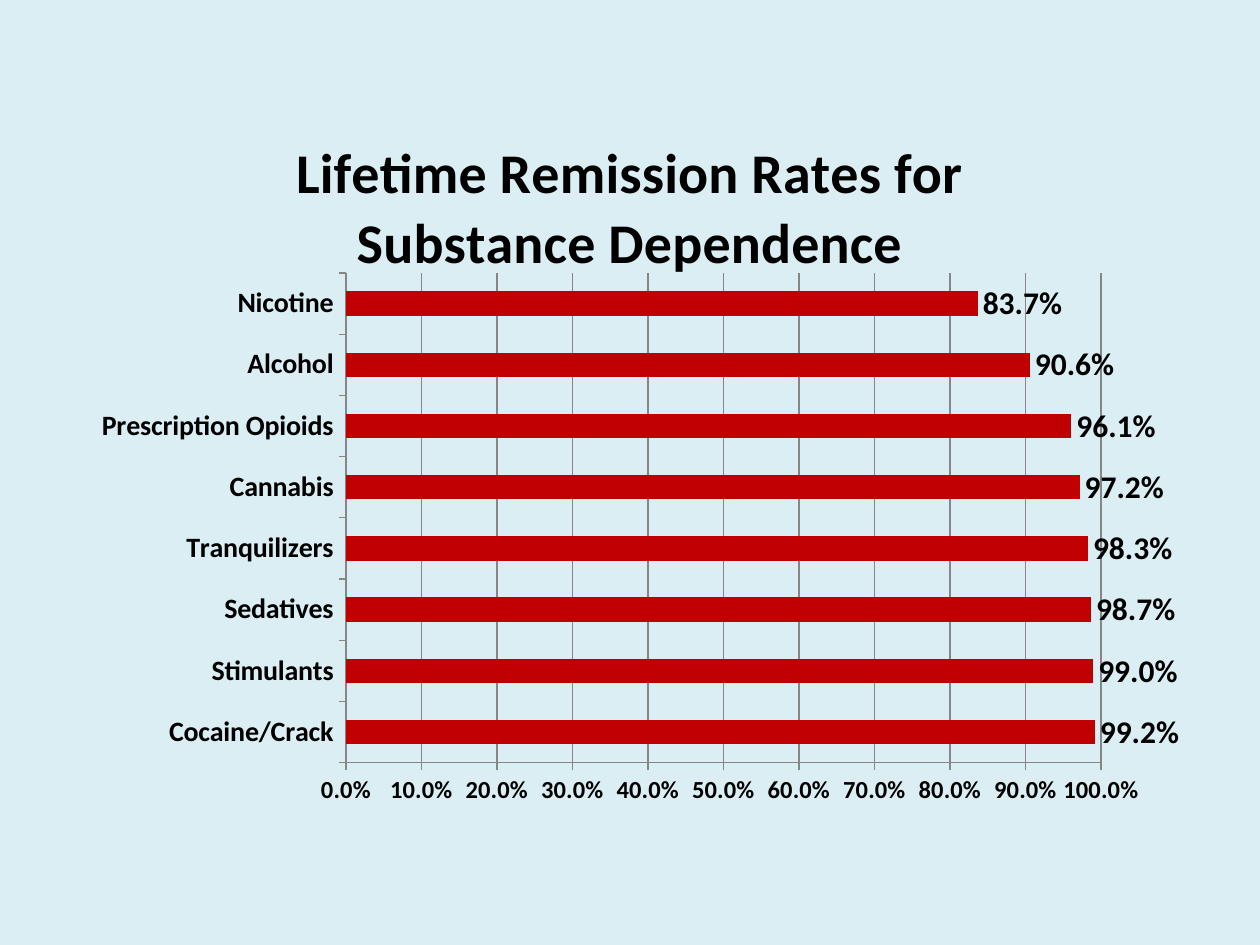
from lxml.etree import SubElement
from pptx import Presentation
from pptx.chart.data import CategoryChartData
from pptx.dml.color import RGBColor
from pptx.enum.chart import XL_CHART_TYPE, XL_LABEL_POSITION, XL_TICK_MARK
from pptx.oxml.ns import qn
from pptx.util import Emu, Pt

BACKGROUND = RGBColor(0xDB, 0xEE, 0xF4)
BAR = RGBColor(0xC0, 0x00, 0x00)
TEXT = RGBColor(0x00, 0x00, 0x00)
GRID = RGBColor(0x86, 0x86, 0x86)
PERCENT = "0.0%"
RATES = {
    "Cocaine/Crack": 0.992,
    "Stimulants": 0.99,
    "Sedatives": 0.987,
    "Tranquilizers": 0.983,
    "Cannabis": 0.972,
    "Prescription Opioids": 0.961,
    "Alcohol": 0.906,
    "Nicotine": 0.837,
}


def px(n):
    """Turn pixels into EMU."""
    return Emu(round(n * 914400 / 126))


def set_font(font, size, color=TEXT, bold=True, name="Calibri"):
    """Format a font."""
    font.size, font.bold, font.name = Pt(size), bold, name
    font.color.rgb = color


def add_text(tf, text, **fmt):
    """Put one formatted run into a text frame."""
    r = tf.paragraphs[0].add_run()
    r.text = text
    set_font(r.font, **fmt)


def set_layout(parent, before, **values):
    """Give a chart part a manual layout ahead of the named sibling."""
    for old in parent.findall(qn("c:layout")):
        parent.remove(old)
    layout = SubElement(parent, qn("c:layout"))
    manual = SubElement(layout, qn("c:manualLayout"))
    for tag, value in values.items():
        SubElement(manual, qn(f"c:{tag}")).set("val", str(value))
    parent.find(qn(f"c:{before}")).addprevious(layout)


def style_axis(axis, size):
    """Format the labels, line and ticks of an axis."""
    set_font(axis.tick_labels.font, size)
    axis.format.line.color.rgb = GRID
    axis.format.line.width = Pt(0.75)
    axis.major_tick_mark = XL_TICK_MARK.OUTSIDE
    axis.minor_tick_mark = XL_TICK_MARK.NONE


def add_rates_chart(s, x, y, w, h):
    """Add the titled bar chart of remission rates in the given box."""
    data = CategoryChartData(number_format=PERCENT)
    data.categories = list(RATES)
    data.add_series("Series 1", list(RATES.values()))
    chart = s.shapes.add_chart(XL_CHART_TYPE.BAR_CLUSTERED,
                               px(x), px(y), px(w), px(h), data).chart
    set_font(chart.font, 11)
    chart.has_legend = False
    add_text(chart.chart_title.text_frame,
             "Lifetime Remission Rates for Substance Dependence", size=32)
    chart.chart_title.include_in_layout = False
    set_layout(chart.chart_title._element, "overlay",
               xMode="edge", yMode="edge", x=223 / w, y=18 / h)

    plot = chart.plots[0]
    plot.gap_width = 150
    plot.vary_by_categories = False
    fill = plot.series[0].format.fill
    fill.solid()
    fill.fore_color.rgb = BAR
    plot.has_data_labels = True
    labels = plot.data_labels
    set_font(labels.font, 18)
    labels.show_value = True
    labels.position = XL_LABEL_POSITION.OUTSIDE_END
    labels.number_format, labels.number_format_is_linked = PERCENT, False

    style_axis(chart.category_axis, 16)
    axis = chart.value_axis
    style_axis(axis, 14)
    axis.minimum_scale, axis.maximum_scale, axis.major_unit = 0, 1, 0.1
    axis.tick_labels.number_format = PERCENT
    axis.tick_labels.number_format_is_linked = False
    axis.has_major_gridlines = True
    axis.major_gridlines.format.line.color.rgb = GRID
    axis.major_gridlines.format.line.width = Pt(0.75)
    set_layout(plot._element.getparent(), "barChart", layoutTarget="inner",
               xMode="edge", yMode="edge",
               x=283 / w, y=168 / h, w=755 / w, h=490 / h)


def main():
    """Build the slide."""
    prs = Presentation()
    prs.slide_width, prs.slide_height = px(1260), px(945)
    s = prs.slides.add_slide(prs.slide_layouts[6])
    s.background.fill.solid()
    s.background.fill.fore_color.rgb = BACKGROUND
    add_rates_chart(s, 63, 105, 1134, 740)
    prs.save("out.pptx")


if __name__ == "__main__":
    main()
